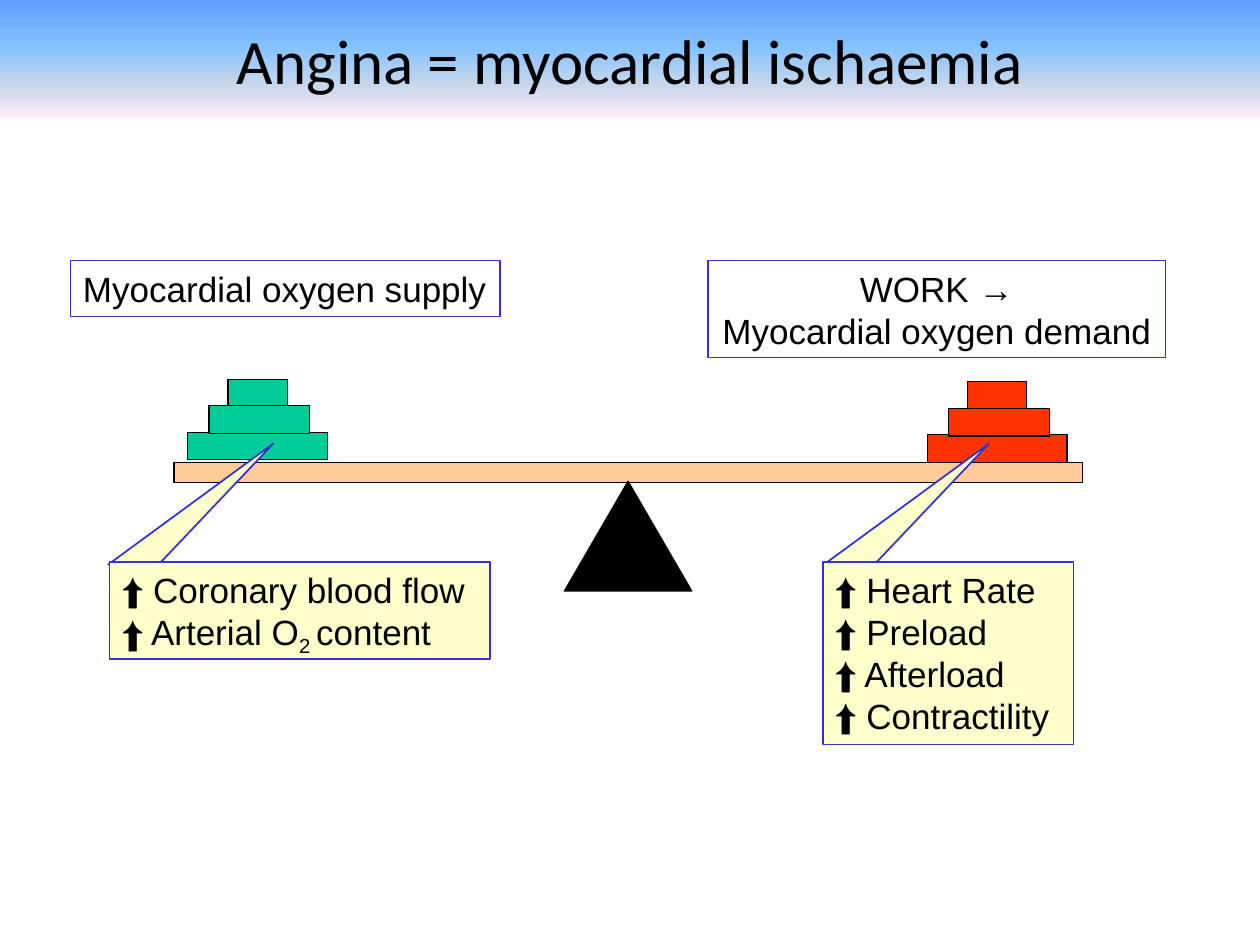
"""Build a slide that shows angina as a balance of oxygen supply and demand."""
from dataclasses import dataclass

from lxml.etree import SubElement
from pptx import Presentation
from pptx.dml.color import RGBColor
from pptx.enum.shapes import MSO_SHAPE
from pptx.enum.text import MSO_ANCHOR, MSO_AUTO_SIZE, PP_ALIGN
from pptx.oxml.ns import qn
from pptx.util import Pt

EMU_PER_PX = 9144


def px(n):
    return n * EMU_PER_PX


@dataclass(frozen=True)
class Theme:
    ink: str = "000000"
    paper: str = "FFFFFF"
    note: str = "FFFFCC"
    edge: str = "3333CC"
    beam: str = "FFCC99"
    supply: str = "00CC99"
    demand: str = "FF3300"
    banner: tuple = ((0, "5E9EFF"), (40, "85C2FF"), (70, "C4D6EB"), (100, "FFEBFA"))
    title_font: str = "Calibri"
    body_font: str = "Arial"
    title_size: int = 36
    body_size: int = 20


class Canvas:
    def __init__(self, slide, theme):
        self.slide = slide
        self.theme = theme

    def paint(self, sp, fill, line, weight=0.75):
        sp.fill.solid()
        sp.fill.fore_color.rgb = RGBColor.from_string(fill)
        sp.line.color.rgb = RGBColor.from_string(line)
        sp.line.width = Pt(weight)
        sp.shadow.inherit = False

    def style(self, r, font, size):
        r.font.name = font
        r.font.size = Pt(size)
        r.font.color.rgb = RGBColor.from_string(self.theme.ink)

    def title(self, text, x, y, w, h):
        sp = self.slide.shapes.title
        sp.left, sp.top, sp.width, sp.height = map(px, (x, y, w, h))
        sp.fill.gradient()
        sp.fill.gradient_angle = 270
        stops = sp.element.spPr.find(qn("a:gradFill")).find(qn("a:gsLst"))
        stops.clear()
        for pos, color in self.theme.banner:
            gs = SubElement(stops, qn("a:gs"), pos=str(pos * 1000))
            SubElement(gs, qn("a:srgbClr"), val=color)
        tf = sp.text_frame
        tf.text = text
        tf.vertical_anchor = MSO_ANCHOR.MIDDLE
        p = tf.paragraphs[0]
        p.alignment = PP_ALIGN.CENTER
        self.style(p.runs[0], self.theme.title_font, self.theme.title_size)

    def block(self, kind, x, y, w, h, fill):
        sp = self.slide.shapes.add_shape(kind, px(x), px(y), px(w), px(h))
        self.paint(sp, fill, self.theme.ink)

    def weights(self, x, y, fill):
        for dx, dy, w, h in ((0, 42, 111, 22), (17, 21, 80, 22), (32, 0, 47, 21)):
            self.block(MSO_SHAPE.RECTANGLE, x + dx, y + dy, w, h, fill)

    def pointer(self, x, y):
        fb = self.slide.shapes.build_freeform(x, y, scale=EMU_PER_PX)
        fb.add_line_segments([(x + 131, y - 96), (x + 40, y)], close=True)
        self.paint(fb.convert_to_shape(), self.theme.note, self.theme.edge, 1)

    def box(self, lines, x, y, w, h, fill, align=PP_ALIGN.LEFT, wrap=False, weight=0.75):
        sp = self.slide.shapes.add_textbox(px(x), px(y), px(w), px(h))
        self.paint(sp, fill, self.theme.edge, weight)
        tf = sp.text_frame
        tf.word_wrap = wrap
        tf.auto_size = MSO_AUTO_SIZE.SHAPE_TO_FIT_TEXT
        tf.text = "\n".join(lines)
        for p in tf.paragraphs:
            p.alignment = align
            for r in p.runs:
                self.style(r, self.theme.body_font, self.theme.body_size)
        return tf

    def add_run(self, p, text):
        r = p.add_run()
        r.text = text
        self.style(r, self.theme.body_font, self.theme.body_size)
        return r

    def bullet(self, p, char, indent):
        pPr = p._p.get_or_add_pPr()
        pPr.set("marL", str(px(indent)))
        pPr.set("indent", str(-px(indent)))
        SubElement(pPr, qn("a:buFont"), typeface=self.theme.body_font)
        SubElement(pPr, qn("a:buChar"), char=char)


def main():
    prs = Presentation()
    prs.slide_width, prs.slide_height = px(1000), px(750)
    theme = Theme()
    s = Canvas(prs.slides.add_slide(prs.slide_layouts[5]), theme)

    s.title("Angina = myocardial ischaemia", 0, 0, 1000, 94)
    s.block(MSO_SHAPE.RECTANGLE, 138, 367, 721, 16, theme.beam)
    s.block(MSO_SHAPE.ISOSCELES_TRIANGLE, 448, 382, 101, 87, theme.ink)
    s.weights(149, 301, theme.supply)
    s.weights(736, 303, theme.demand)

    s.box(["Myocardial oxygen supply"], 56, 207, 341, 44, theme.paper)
    tf = s.box(["WORK ", "Myocardial oxygen demand"], 562, 207, 363, 77,
               theme.paper, PP_ALIGN.CENTER)
    s.add_run(tf.paragraphs[0], "→").font.bold = True

    for x in (654, 86):
        s.pointer(x, 448)

    tf = s.box(["⬆ Coronary blood flow", "Arterial O"], 87, 446, 302, 77,
               theme.note, wrap=True)
    p = tf.paragraphs[1]
    s.bullet(p, "⬆", 23)
    s.add_run(p, "2 ").font._element.set("baseline", "-25000")
    s.add_run(p, "content")

    factors = ("Heart Rate", "Preload", "Afterload", "Contractility")
    s.box([f"⬆ {factor}" for factor in factors], 653, 446, 199, 145,
          theme.note, wrap=True, weight=1)

    prs.save("out.pptx")


if __name__ == "__main__":
    main()
